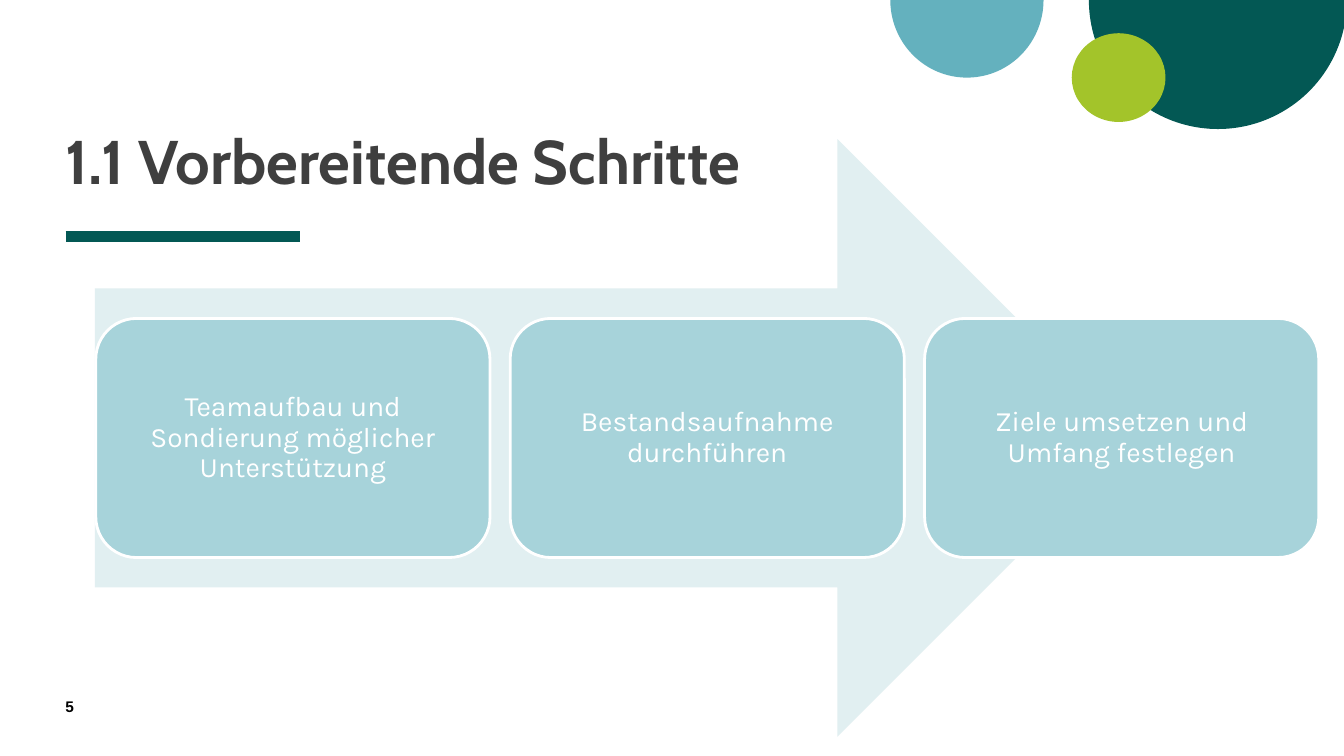
from pptx import Presentation
from pptx.dml.color import RGBColor
from pptx.enum.shapes import MSO_CONNECTOR, MSO_SHAPE
from pptx.enum.text import MSO_ANCHOR, MSO_AUTO_SIZE, PP_ALIGN
from pptx.oxml.ns import qn
from pptx.util import Inches, Pt

COLORS = {
    "pine": "035854", "sea": "64B1BE", "lime": "A3C42A", "title": "3F3F3F",
    "arrow": "E1EFF1", "step": "A7D3DA", "white": "FFFFFF", "black": "000000",
}
STEPS = [
    "Teamaufbau und Sondierung möglicher Unterstützung",
    "Bestandsaufnahme durchführen",
    "Ziele umsetzen und Umfang festlegen",
]


def color(name):
    return RGBColor.from_string(COLORS[name])


def add_filled(page, preset, box, fill):
    shape = page.shapes.add_shape(preset, *map(Inches, box))
    shape.shadow.inherit = False
    shape.fill.solid()
    shape.fill.fore_color.rgb = color(fill)
    shape.line.fill.background()
    return shape


def write(shape, text, size, font, ink, anchor, margin=0, align=PP_ALIGN.LEFT, bold=False, spacing=1.0):
    frame = shape.text_frame
    frame.word_wrap = True
    frame.auto_size = MSO_AUTO_SIZE.NONE
    frame.vertical_anchor = anchor
    frame.margin_left = frame.margin_right = Inches(margin)
    frame.margin_top = frame.margin_bottom = Inches(margin)
    frame.text = text
    para = frame.paragraphs[0]
    para.alignment = align
    para.line_spacing = spacing
    para.font.size = Pt(size)
    para.font.name = font
    para.font.bold = bold
    para.font.color.rgb = color(ink)


def add_corner_circles(page, left, top):
    """Hang two half discs from the page's top edge, with a small disc in front."""
    half_discs = [
        ((left + 1.97, top - 1.28, 2.56, 2.56), "pine"),
        ((left, top - 0.77, 1.52, 1.54), "sea"),
    ]
    for box, fill in half_discs:
        disc = add_filled(page, MSO_SHAPE.PIE, box, fill)
        disc.adjustments[0] = 0
        disc.adjustments[1] = 108  # 180 degrees
    add_filled(page, MSO_SHAPE.OVAL, (left + 1.8, top + 0.33, 0.93, 0.88), "lime")


def add_heading(page, text, left, top, width, height):
    title = page.shapes.title
    title.left, title.top = Inches(left), Inches(top)
    title.width, title.height = Inches(width), Inches(height)
    write(title, text, 44, "Cabin", "title", MSO_ANCHOR.BOTTOM, bold=True, spacing=0.8)

    rule_y = Inches(top + height + 0.4)
    rule = page.shapes.add_connector(
        MSO_CONNECTOR.STRAIGHT, Inches(left), rule_y, Inches(left + 2.33), rule_y)
    rule.line.color.rgb = color("pine")
    rule.line.width = Pt(8)
    properties = rule._element.spPr
    properties.append(properties.makeelement(qn("a:effectLst"), {}))


def add_process(page, steps, left, top, width, height):
    """Draw the wide arrow with a row of step cards centred on its height."""
    add_filled(page, MSO_SHAPE.RIGHT_ARROW, (left, top, width, height), "arrow")
    card_width, card_height, gap = 3.91, 0.4 * height, 0.2
    card_top = top + (height - card_height) / 2
    for index, step in enumerate(steps):
        card_left = left + 0.01 + index * (card_width + gap)
        card = add_filled(page, MSO_SHAPE.ROUNDED_RECTANGLE,
                          (card_left, card_top, card_width, card_height), "step")
        card.adjustments[0] = 0.17
        card.line.color.rgb = color("white")
        card.line.width = Pt(2)
        write(card, step, 20, "Karla", "white", MSO_ANCHOR.MIDDLE,
              margin=0.12, align=PP_ALIGN.CENTER, spacing=0.9)


def add_page_number(page, number, left, top, width, height):
    box = page.shapes.add_textbox(*map(Inches, (left, top, width, height)))
    write(box, number, 11, "Arial", "black", MSO_ANCHOR.TOP, bold=True)


def main():
    deck = Presentation()
    deck.slide_width, deck.slide_height = Inches(13.33), Inches(7.5)
    page = deck.slides.add_slide(deck.slide_layouts[5])
    add_corner_circles(page, 8.83, 0)
    add_heading(page, "1.1 Vorbereitende Schritte", 0.65, 0.21, 8.39, 1.74)
    add_process(page, STEPS, 0.94, 1.38, 10.33, 5.93)
    add_page_number(page, "5", 0.65, 6.92, 0.57, 0.27)
    deck.save("out.pptx")


if __name__ == "__main__":
    main()
